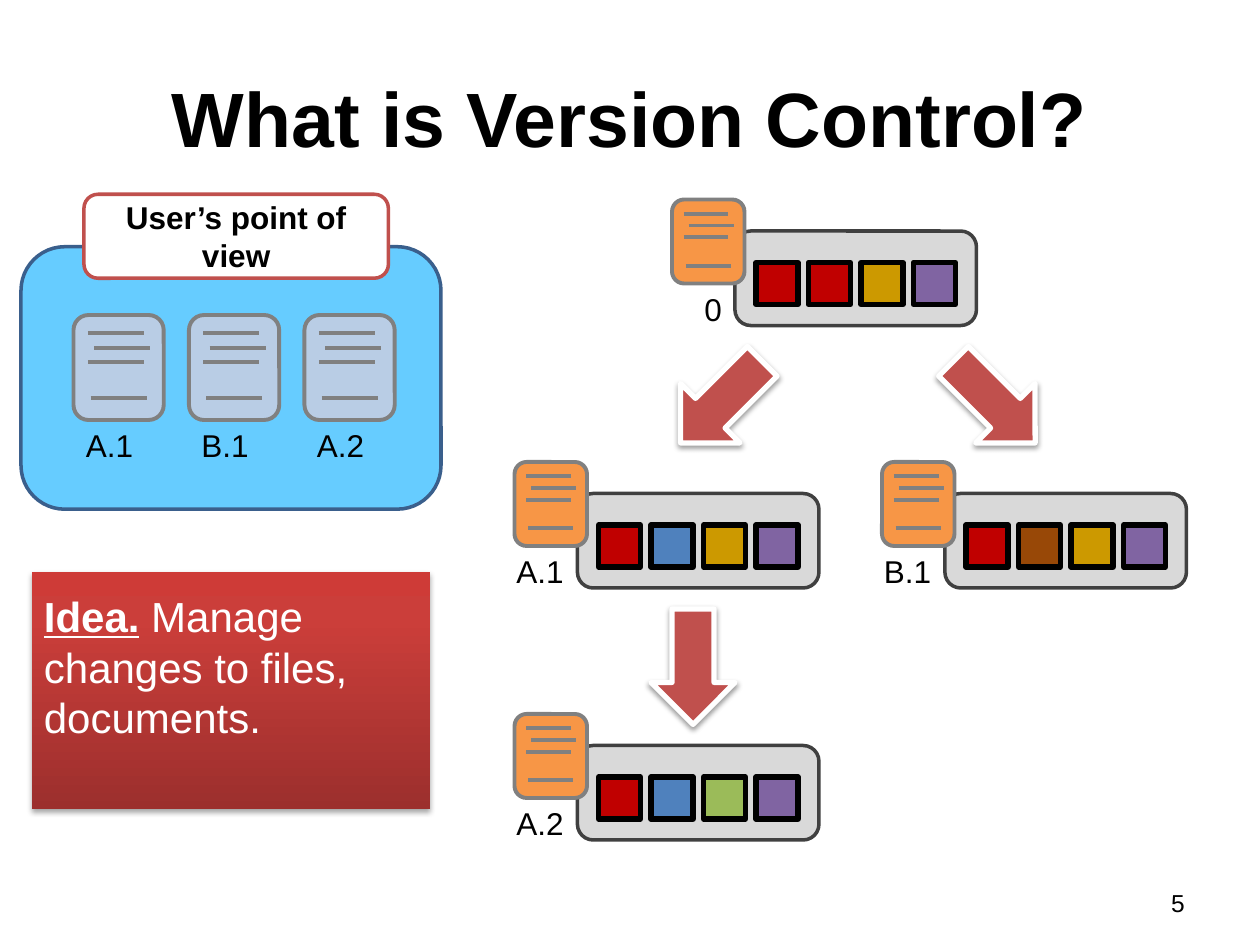
from copy import deepcopy

from lxml.etree import SubElement
from pptx import Presentation
from pptx.dml.color import RGBColor
from pptx.enum.shapes import MSO_CONNECTOR, MSO_SHAPE
from pptx.enum.text import MSO_ANCHOR, PP_ALIGN
from pptx.oxml.ns import qn
from pptx.util import Inches, Pt

BLACK = RGBColor(0x00, 0x00, 0x00)
WHITE = RGBColor(0xFF, 0xFF, 0xFF)
GREY = RGBColor(0x80, 0x80, 0x80)
DARK = RGBColor(0x40, 0x40, 0x40)
PALE = RGBColor(0xD9, 0xD9, 0xD9)
RED = RGBColor(0xC0, 0x00, 0x00)
GOLD = RGBColor(0xCC, 0x99, 0x00)
PURPLE = RGBColor(0x80, 0x64, 0xA2)
BLUE = RGBColor(0x4F, 0x81, 0xBD)
GREEN = RGBColor(0x9B, 0xBB, 0x59)
BROWN = RGBColor(0x98, 0x48, 0x07)
ORANGE = RGBColor(0xF7, 0x96, 0x46)
BRICK = RGBColor(0xC0, 0x50, 0x4D)
SKY = RGBColor(0x66, 0xCC, 0xFF)
NAVY = RGBColor(0x3A, 0x5F, 0x8C)
MIST = RGBColor(0xB9, 0xCD, 0xE5)
FADE = ((0, RGBColor(0x9C, 0x2F, 0x2D)), (0.8, RGBColor(0xCB, 0x3E, 0x3A)),
        (1, RGBColor(0xCE, 0x3B, 0x37)))

RECT, ROUND = MSO_SHAPE.RECTANGLE, MSO_SHAPE.ROUNDED_RECTANGLE

# Left end and height of each line of writing, as shares of the page icon
LINES = ((0.16, 0.17), (0.23, 0.31), (0.16, 0.45), (0.19, 0.79))


def cells(*counts):
    """Turn columns or rows of the grid, twelve to the inch, into lengths."""
    return [Inches(count / 12) for count in counts]


def write(frame, text, size=18, color=BLACK, bold=False, under=False,
          align=PP_ALIGN.LEFT):
    """Add a run to the first paragraph of a text frame."""
    line = frame.paragraphs[0]
    line.alignment = align
    run = line.add_run()
    run.text = text
    font = run.font
    font.name, font.size, font.bold, font.underline = "Arial", Pt(size), bold, under
    font.color.rgb = color


class Deck:
    def __init__(self):
        self.show = Presentation()
        self.show.slide_width, self.show.slide_height = cells(120, 90)
        self.slide = self.show.slides.add_slide(self.show.slide_layouts[6])

    def shape(self, kind, x, y, w, h, fill=None, line=None, width=2):
        item = self.slide.shapes.add_shape(kind, *cells(x, y, w, h))
        item.shadow.inherit = False
        if fill is not None:
            item.fill.solid()
            item.fill.fore_color.rgb = fill
        if line is None:
            item.line.fill.background()
        else:
            item.line.color.rgb = line
            item.line.width = Pt(width)
        return item

    def rule(self, x, y, w):
        line = self.slide.shapes.add_connector(MSO_CONNECTOR.STRAIGHT,
                                               *cells(x, y, x + w, y))
        line.line.color.rgb = GREY
        line.line.width = Pt(2.25)
        SubElement(line.element.spPr, qn("a:effectLst"))

    def shade(self, item, alpha):
        """Give a shape a soft shadow below it."""
        effects = item.element.spPr.find(qn("a:effectLst"))
        cast = SubElement(effects, qn("a:outerShdw"), blurRad=str(Pt(3.1)),
                          dist=str(Pt(1.7)), dir="5400000", rotWithShape="0")
        tint = SubElement(cast, qn("a:srgbClr"), val=str(BLACK))
        SubElement(tint, qn("a:alpha"), val=str(alpha * 1000))

    def text(self, words, x, y, w, h, wrap=True, anchor=MSO_ANCHOR.TOP, **style):
        frame = self.slide.shapes.add_textbox(*cells(x, y, w, h)).text_frame
        frame.word_wrap = wrap
        frame.vertical_anchor = anchor
        write(frame, words, **style)

    def page(self, x, y, w, h, fill):
        """Draw a document icon with four lines of writing."""
        self.shape(ROUND, x, y, w, h, fill, GREY, 2.25)
        for left, down in LINES:
            self.rule(x + left * w, y + down * h, 0.62 * w)

    def version(self, name, x, y, colors, wide=7):
        """Draw a stored version: a rack of blocks, its page and its name."""
        self.shape(ROUND, x, y, 23, 9, PALE, DARK)
        for slot, color in enumerate(colors):
            self.shape(RECT, x + 2 + 5 * slot, y + 3, 4, 4, color, BLACK, 3)
        self.page(x - 6, y - 3, 6.9, 8, ORANGE)
        self.text(name, x - wide, y + 5, wide, 4.8, wrap=False)

    def arrow(self, x, y, turn):
        item = self.shape(MSO_SHAPE.RIGHT_ARROW, x, y, 11, 8, BRICK, WHITE, 3)
        item.rotation = turn
        self.shade(item, 38)

    def idea(self, x, y, w, h):
        item = self.shape(RECT, x, y, w, h)
        item.fill.gradient()
        item.fill.gradient_angle = 90
        stops = item.element.spPr.find(".//" + qn("a:gsLst"))
        stops.append(deepcopy(stops[0]))
        for stop, (place, color) in zip(item.fill.gradient_stops, FADE):
            stop.position = place
            stop.color.rgb = color
        self.shade(item, 35)
        frame = item.text_frame
        frame.word_wrap = True
        frame.vertical_anchor = MSO_ANCHOR.MIDDLE
        frame.margin_bottom = Inches(0.44)
        write(frame, "Idea.", 24, WHITE, bold=True, under=True)
        write(frame, " Manage changes to files, documents.", 24, WHITE)

    def view(self, x, y, title, names):
        """Draw the user's panel with a heading and a row of pages."""
        self.shape(ROUND, x, y, 40, 25, SKY, NAVY)
        head = self.shape(ROUND, x + 6, y - 5, 29, 8, WHITE, BRICK).text_frame
        head.word_wrap = True
        head.vertical_anchor = MSO_ANCHOR.MIDDLE
        write(head, title, bold=True, align=PP_ALIGN.CENTER)
        for slot, name in enumerate(names):
            left = x + 5 + 11 * slot
            self.page(left, y + 6.5, 8.6, 10, MIST)
            self.text(name, left, y + 16.5, 7, 4.8, wrap=False)


def main():
    deck = Deck()
    deck.text("What is Version Control?", 6, 3.6, 108, 15, size=44, bold=True,
              anchor=MSO_ANCHOR.MIDDLE, align=PP_ALIGN.CENTER)
    deck.idea(3, 54.5, 38, 22.6)
    deck.version("0", 70, 22, (RED, RED, GOLD, PURPLE), wide=4.1)
    deck.version("A.1", 55, 47, (RED, BLUE, GOLD, PURPLE))
    deck.version("B.1", 90, 47, (RED, BROWN, GOLD, PURPLE))
    deck.version("A.2", 55, 71, (RED, BLUE, GREEN, PURPLE))
    for x, y, turn in ((60.5, 59.5, 90), (89.2, 34.3, 45), (63.2, 34.3, 135)):
        deck.arrow(x, y, turn)
    deck.view(2, 23.5, "User’s point of view", ("A.1", "B.1", "A.2"))
    deck.text("5", 86, 84, 28, 4.2, size=14, align=PP_ALIGN.RIGHT)
    deck.show.save("out.pptx")


if __name__ == "__main__":
    main()
